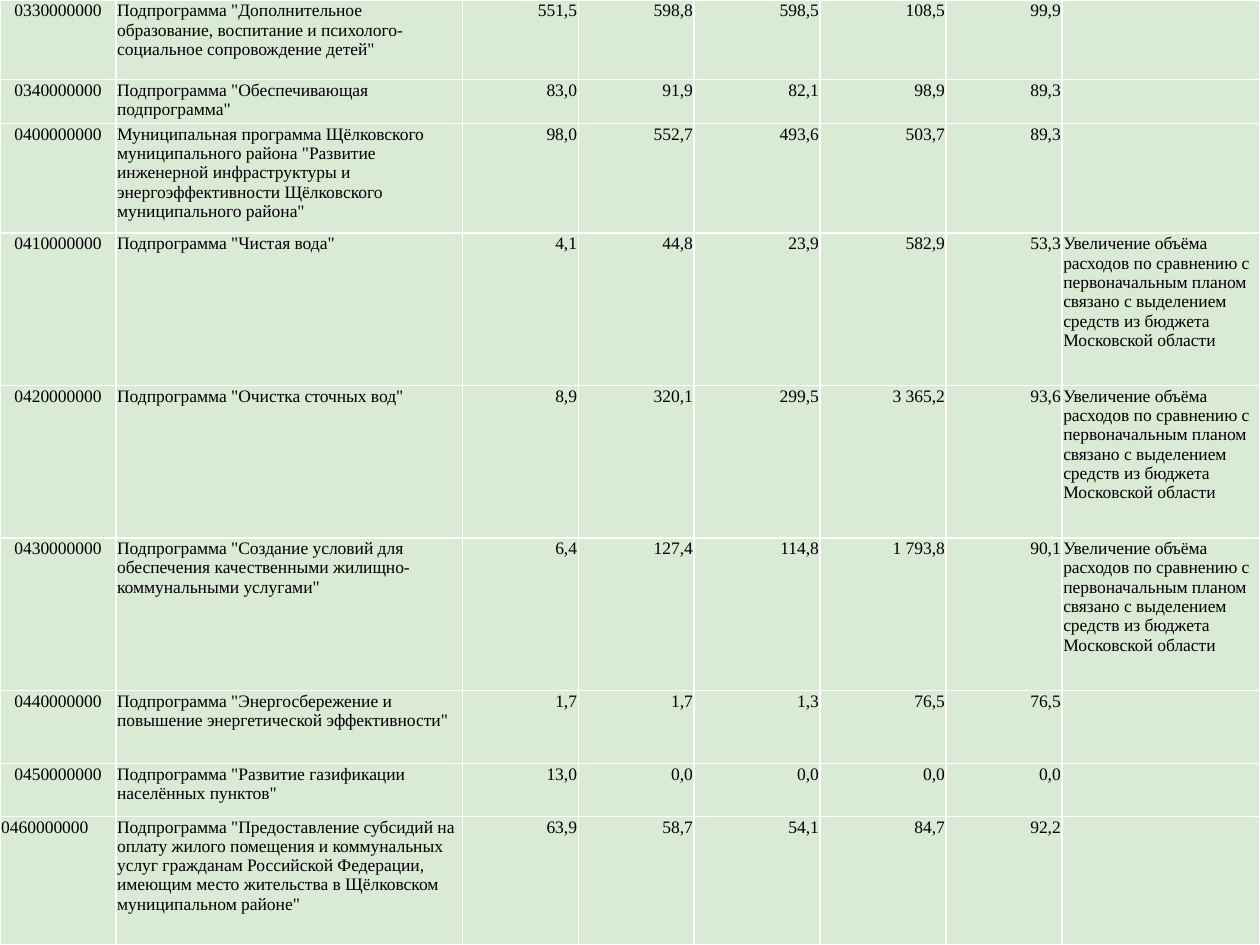
from lxml.etree import SubElement as Sub
from pptx import Presentation
from pptx.dml.color import RGBColor as Rgb
from pptx.enum.text import PP_ALIGN as Al, MSO_ANCHOR as Anchor
from pptx.oxml.ns import qn
from pptx.util import Inches, Pt

THEME = {"back": "92D050", "cell": "D9EAD5", "line": "FFFFFF", "ink": "000000",
         "font": "Times New Roman", "size": 10, "rule": 1}
NOTE = ("Увеличение объёма расходов по сравнению с первоначальным планом "
        "связано с выделением средств из бюджета Московской области")
COLS = [0.92, 2.75, 0.92, 0.92, 1, 1, 0.92, 1.57]
ALIGN = [Al.CENTER, Al.LEFT] + [Al.RIGHT] * 5 + [Al.LEFT]
ROWS = [
    (0.63, "0330000000", 'Подпрограмма "Дополнительное образование, воспитание и '
     'психолого-социальное сопровождение детей"',
     "551,5", "598,8", "598,5", "108,5", "99,9", ""),
    (0.35, "0340000000", 'Подпрограмма "Обеспечивающая подпрограмма"',
     "83,0", "91,9", "82,1", "98,9", "89,3", ""),
    (0.87, "0400000000", 'Муниципальная программа Щёлковского муниципального района '
     '"Развитие инженерной инфраструктуры и энергоэффективности '
     'Щёлковского муниципального района"',
     "98,0", "552,7", "493,6", "503,7", "89,3", ""),
    (1.21, "0410000000", 'Подпрограмма "Чистая вода"',
     "4,1", "44,8", "23,9", "582,9", "53,3", NOTE),
    (1.21, "0420000000", 'Подпрограмма "Очистка сточных вод"',
     "8,9", "320,1", "299,5", "3 365,2", "93,6", NOTE),
    (1.21, "0430000000", 'Подпрограмма "Создание условий для обеспечения '
     'качественными жилищно-коммунальными услугами"',
     "6,4", "127,4", "114,8", "1 793,8", "90,1", NOTE),
    (0.58, "0440000000", 'Подпрограмма "Энергосбережение и повышение '
     'энергетической эффективности"',
     "1,7", "1,7", "1,3", "76,5", "76,5", ""),
    (0.42, "0450000000", 'Подпрограмма "Развитие газификации населённых пунктов"',
     "13,0", "0,0", "0,0", "0,0", "0,0", ""),
    (1.02, "0460000000", 'Подпрограмма "Предоставление субсидий на оплату жилого '
     'помещения и коммунальных услуг гражданам Российской Федерации, имеющим '
     'место жительства в Щёлковском муниципальном районе"',
     "63,9", "58,7", "54,1", "84,7", "92,2", ""),
]


def put(frame, text, align=Al.LEFT, size=THEME["size"], ink=THEME["ink"]):
    par = frame.paragraphs[0]
    par.alignment = align
    run = par.add_run()
    run.text = text
    run.font.name = THEME["font"]
    run.font.size = Pt(size)
    run.font.bold = False
    run.font.color.rgb = Rgb.from_string(ink)


def dress(cell):
    cell.margin_left = cell.margin_right = cell.margin_top = Inches(0.01)
    cell.margin_bottom = 0
    cell.vertical_anchor = Anchor.TOP
    props = cell._tc.get_or_add_tcPr()
    for side in ("lnL", "lnR", "lnT", "lnB"):
        line = Sub(props, qn(f"a:{side}"), w=str(Pt(THEME["rule"])))
        Sub(Sub(line, qn("a:solidFill")), qn("a:srgbClr"), val=THEME["line"])
    cell.fill.solid()
    cell.fill.fore_color.rgb = Rgb.from_string(THEME["cell"])


def main():
    """Build the slide with the table of programme spending."""
    deck = Presentation()
    deck.slide_width, deck.slide_height = Inches(10), Inches(7.5)
    slide = deck.slides.add_slide(deck.slide_layouts[6])
    slide.background.fill.solid()
    slide.background.fill.fore_color.rgb = Rgb.from_string(THEME["back"])
    table = slide.shapes.add_table(len(ROWS), len(COLS), 0, 0,
                                   deck.slide_width, deck.slide_height).table
    table.first_row = table.horz_banding = False
    for col, width in zip(table.columns, COLS):
        col.width = Inches(width)
    for r, (height, *texts) in enumerate(ROWS):
        table.rows[r].height = Inches(height)
        for c, (text, align) in enumerate(zip(texts, ALIGN)):
            cell = table.cell(r, c)
            dress(cell)
            last = r == len(ROWS) - 1 and c == 0
            put(cell.text_frame, text, align=Al.LEFT if last else align)
    deck.save("out.pptx")


if __name__ == "__main__":
    main()
